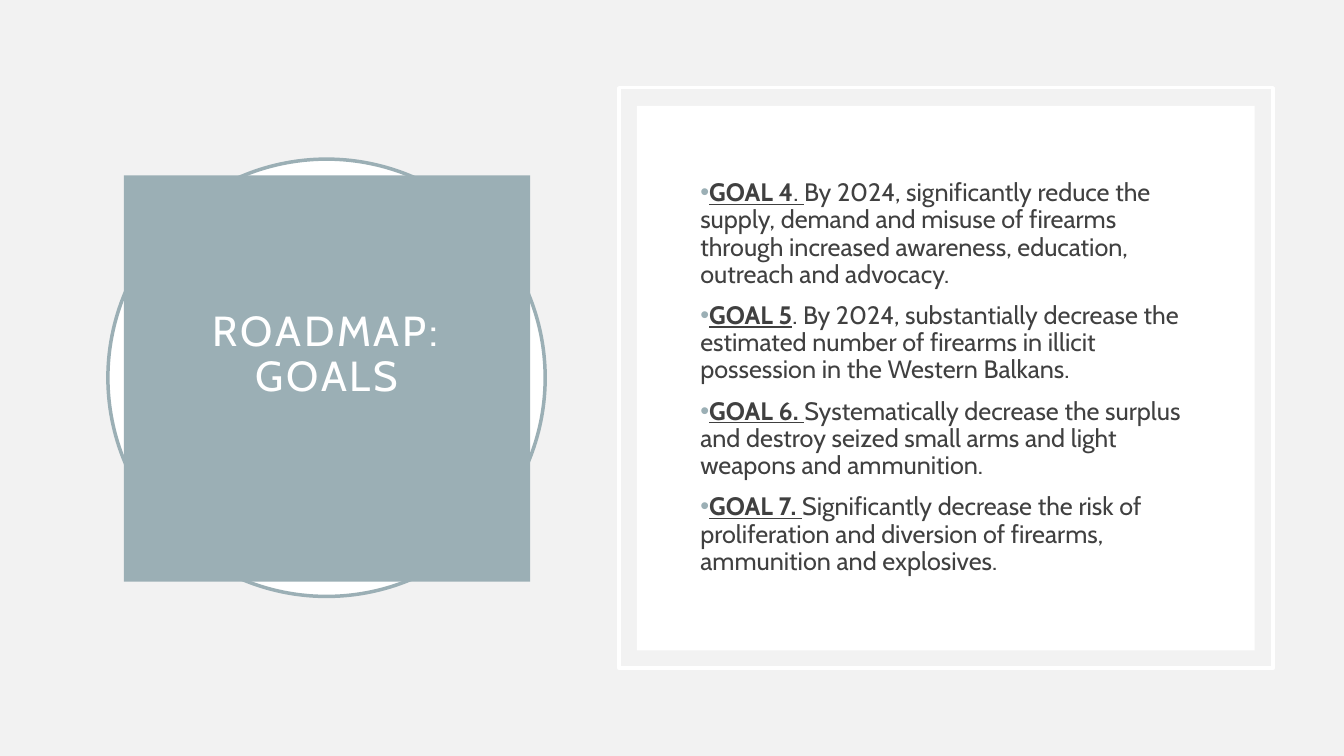
from dataclasses import dataclass

from lxml import etree
from pptx import Presentation
from pptx.dml.color import RGBColor
from pptx.enum.shapes import MSO_SHAPE
from pptx.enum.text import MSO_ANCHOR, PP_ALIGN
from pptx.oxml.ns import qn
from pptx.shapes.autoshape import Shape
from pptx.slide import Slide
from pptx.util import Cm, Pt

RECT, OVAL = MSO_SHAPE.RECTANGLE, MSO_SHAPE.OVAL
MIDDLE = MSO_ANCHOR.MIDDLE
CENTER = PP_ALIGN.CENTER

WHITE = RGBColor(0xFF, 0xFF, 0xFF)
PALE = RGBColor(0xF2, 0xF2, 0xF2)
TEAL = RGBColor(0x9B, 0xAF, 0xB5)
DARK = RGBColor(0x40, 0x40, 0x40)

FONT = "Cabin"
TITLE = {"name": FONT, "size": Pt(30)}
BODY = {"name": FONT, "size": Pt(18)}
BOLD = {"bold": True, "underline": True}
LINED = {"underline": True}
PLAIN = {}


@dataclass(frozen=True)
class Box:
    left: float
    top: float
    width: float
    height: float

    def lengths(self) -> tuple[Cm, Cm, Cm, Cm]:
        return Cm(self.left), Cm(self.top), Cm(self.width), Cm(self.height)


@dataclass(frozen=True)
class Panel:
    kind: MSO_SHAPE
    box: Box
    fill: RGBColor | None = None
    line: RGBColor | None = None


@dataclass(frozen=True)
class Part:
    text: str
    style: dict


RING = Panel(OVAL, Box(2.72, 4.01, 11.02, 11.02), WHITE, TEAL)
SQUARE = Panel(RECT, Box(3.12, 4.42, 10.24, 10.24), TEAL)
FRAME = Panel(RECT, Box(15.6, 2.21, 16.48, 14.63), line=WHITE)
CARD = Panel(RECT, Box(16.05, 2.67, 15.57, 13.72), WHITE)
GOAL_BOX = Box(17.4, 4.01, 12.93, 11.02)

GOALS = [
    [
        Part("GOAL 4", BOLD),
        Part(". ", LINED),
        Part("By 2024, significantly reduce the supply, demand and misuse of "
             "firearms through increased awareness, education, outreach and "
             "advocacy.", PLAIN),
    ],
    [
        Part("GOAL 5", BOLD),
        Part(". By 2024, substantially decrease the estimated number of "
             "firearms in illicit possession in the Western Balkans.", PLAIN),
    ],
    [
        Part("GOAL 6. ", BOLD),
        Part("Systematically decrease the surplus and destroy seized small "
             "arms and light weapons and ammunition.", PLAIN),
    ],
    [
        Part("GOAL 7. ", BOLD),
        Part("Significantly decrease the risk of proliferation and diversion "
             "of firearms, ammunition and explosives.", PLAIN),
    ],
]


def add_panel(slide: Slide, panel: Panel) -> Shape:
    shape = slide.shapes.add_shape(panel.kind, *panel.box.lengths())
    shape.shadow.inherit = False
    if panel.fill is None:
        shape.fill.background()
    else:
        shape.fill.solid()
        shape.fill.fore_color.rgb = panel.fill
    if panel.line is None:
        shape.line.fill.background()
    else:
        shape.line.color.rgb = panel.line
        shape.line.width = Pt(2.5)
    return shape


def set_all(target, values: dict) -> None:
    """Set each named attribute of the target."""
    for name, value in values.items():
        setattr(target, name, value)


def add_run(para, text: str, style: dict, color: RGBColor):
    run = para.add_run()
    run.text = text
    set_all(run.font, style)
    run.font.color.rgb = color
    return run


def add_bullet(para) -> None:
    props = para._p.get_or_add_pPr()
    props.set("marL", "0")
    props.set("indent", str(-Cm(0.64)))
    tint = etree.SubElement(props, qn("a:buClr"))
    etree.SubElement(tint, qn("a:srgbClr"), val=str(TEAL))
    etree.SubElement(props, qn("a:buFont"), typeface="Arial")
    etree.SubElement(props, qn("a:buChar"), char="•")


def add_title(slide: Slide) -> None:
    frame = add_panel(slide, SQUARE).text_frame
    pad = Cm(0.51)
    set_all(frame, {
        "word_wrap": True, "vertical_anchor": MIDDLE,
        "margin_left": pad, "margin_right": pad,
        "margin_top": pad, "margin_bottom": Cm(1.68),
    })
    para = frame.paragraphs[0]
    set_all(para, {"alignment": CENTER, "line_spacing": 0.9})
    run = add_run(para, "ROADMAP: GOALS", TITLE, WHITE)
    run._r.get_or_add_rPr().set("spc", "200")


def add_goals(slide: Slide) -> None:
    frame = slide.shapes.add_textbox(*GOAL_BOX.lengths()).text_frame
    set_all(frame, {"word_wrap": True, "vertical_anchor": MIDDLE})
    for index, goal in enumerate(GOALS):
        para = frame.add_paragraph() if index else frame.paragraphs[0]
        set_all(para, {"line_spacing": 0.9, "space_before": Pt(10)})
        add_bullet(para)
        for part in goal:
            add_run(para, part.text, BODY | part.style, DARK)


def main() -> None:
    deck = Presentation()
    set_all(deck, {"slide_width": Cm(33.87), "slide_height": Cm(19.05)})
    slide = deck.slides.add_slide(deck.slide_layouts[6])
    back = slide.background.fill
    back.solid()
    back.fore_color.rgb = PALE
    add_panel(slide, RING)
    add_title(slide)
    for panel in (FRAME, CARD):
        add_panel(slide, panel)
    add_goals(slide)
    deck.save("out.pptx")


if __name__ == "__main__":
    main()
